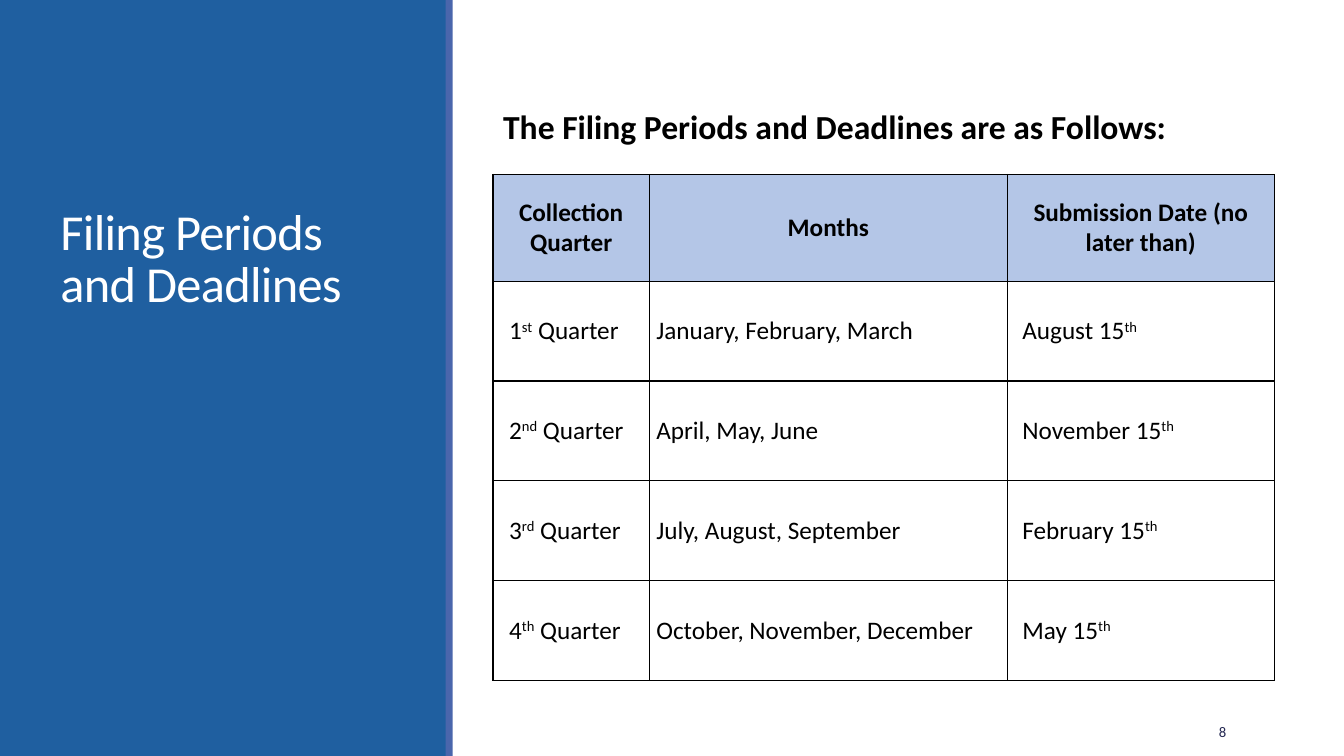
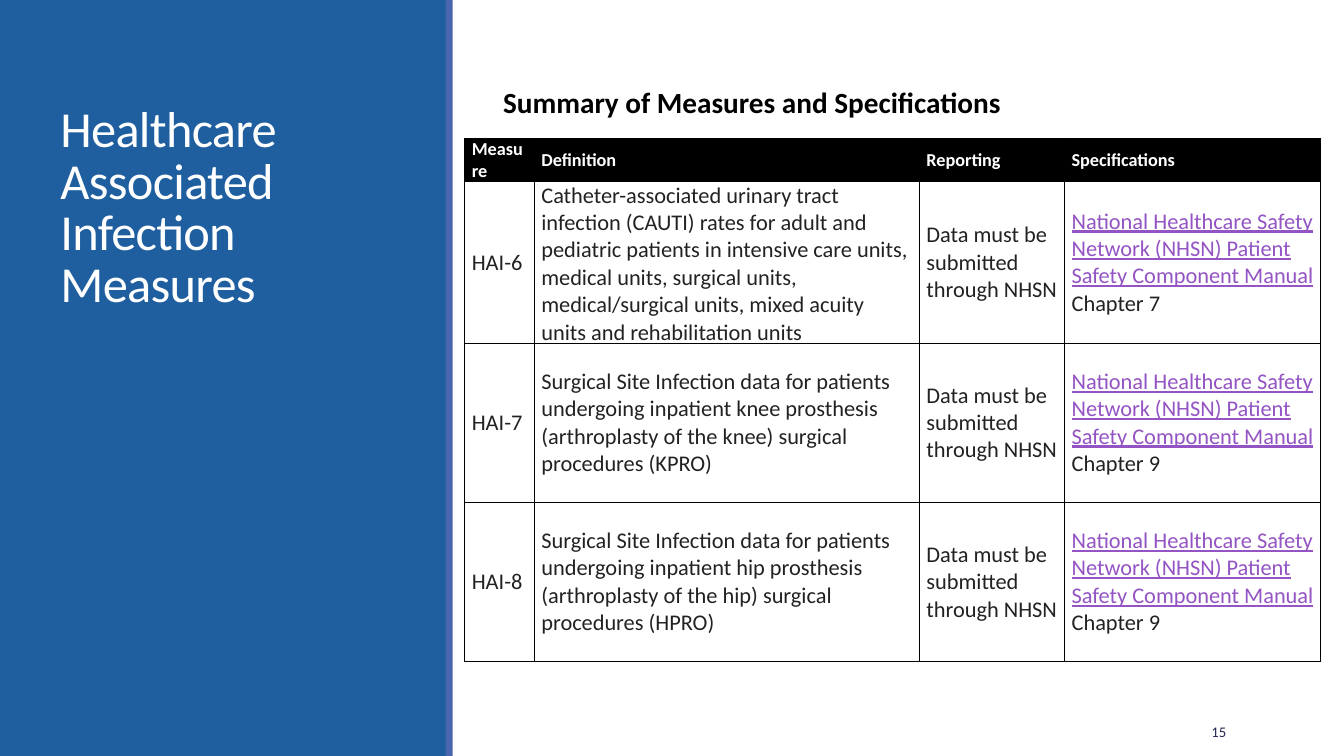
from dataclasses import dataclass

from lxml import etree
from pptx import Presentation
from pptx.dml.color import RGBColor
from pptx.enum import shapes, text
from pptx.oxml import parse_xml
from pptx.oxml.ns import nsdecls
from pptx.util import Inches, Pt


@dataclass(frozen=True)
class Theme:
    font: str = "Calibri"
    panel: str = "1F5FA0"
    stripe: str = "4A66AC"
    white: str = "FFFFFF"
    black: str = "000000"
    body: str = "222222"
    header: str = "B4C6E7"
    link: str = "9454C3"
    number: str = "242852"
    title_size: float = 36
    number_size: float = 10.5


THEME = Theme()
MANUAL = "|National Healthcare Safety Network (NHSN) Patient Safety Component Manual|"
REPORTING = "Data must be submitted through NHSN"

# In a cell, text between bars is marked: raised or shown as a link.
PAGES = [
    dict(
        title="Filing Periods and Deadlines",
        number="8",
        heading="The Filing Periods and Deadlines are as Follows:",
        heading_size=24, heading_top=1.0,
        left=4.89, top=1.73,
        columns=[1.55, 3.55, 2.65], indents=[0.09, 0, 0.08],
        header_height=1.06, row_height=0.99,
        header_size=18, body_size=18,
        header_fill=THEME.header, header_color=THEME.black, body_color=THEME.black,
        header_align=text.PP_ALIGN.CENTER, mark="raised",
        rows=[
            ["Collection Quarter", "Months", "Submission Date (no later than)"],
            ["1|st| Quarter", "January, February, March", "August 15|th|"],
            ["2|nd| Quarter", "April, May, June", "November 15|th|"],
            ["3|rd| Quarter", "July, August, September", "February 15|th|"],
            ["4|th| Quarter", "October, November, December", "May 15|th|"],
        ],
    ),
    dict(
        title="Healthcare Associated Infection Measures",
        number="15",
        heading="Summary of Measures and Specifications",
        heading_size=20.9, heading_top=0.76,
        left=4.61, top=1.37,
        columns=[0.69, 3.82, 1.44, 2.54], indents=[0, 0, 0, 0],
        header_height=0.32, row_height=1.58,
        header_size=13, body_size=16,
        header_fill=THEME.black, header_color=THEME.white, body_color=THEME.body,
        header_align=text.PP_ALIGN.LEFT, mark="link",
        rows=[
            ["Measure", "Definition", "Reporting", "Specifications"],
            ["HAI-6",
             "Catheter-associated urinary tract infection (CAUTI) rates for adult and "
             "pediatric patients in intensive care units, medical units, surgical units, "
             "medical/surgical units, mixed acuity units and rehabilitation units",
             REPORTING, MANUAL + " Chapter 7"],
            ["HAI-7",
             "Surgical Site Infection data for patients undergoing inpatient knee "
             "prosthesis (arthroplasty of the knee) surgical procedures (KPRO)",
             REPORTING, MANUAL + " Chapter 9"],
            ["HAI-8",
             "Surgical Site Infection data for patients undergoing inpatient hip "
             "prosthesis (arthroplasty of the hip) surgical procedures (HPRO)",
             REPORTING, MANUAL + " Chapter 9"],
        ],
    ),
]


def style(paragraph, size, color, bold=False, align=text.PP_ALIGN.LEFT):
    paragraph.alignment = align
    font = paragraph.font
    font.name, font.size, font.bold = THEME.font, Pt(size), bold
    font.color.rgb = RGBColor.from_string(color)


def add_line(slide, words, box, **look):
    """Add a one-paragraph text box, centred vertically in box (inches)."""
    frame = slide.shapes.add_textbox(*map(Inches, box)).text_frame
    frame.word_wrap = True
    frame.vertical_anchor = text.MSO_ANCHOR.MIDDLE
    frame.paragraphs[0].text = words
    style(frame.paragraphs[0], **look)
    return frame


prs = Presentation()
prs.slide_width, prs.slide_height = Inches(13.33), Inches(7.5)
layout = prs.slide_layouts[5]
slides = [prs.slides.add_slide(layout) for _ in PAGES]

# The side panel is drawn once, then moved to the back of the shared layout.
for order, (left, width, color) in enumerate(
        [(0, 4.43, THEME.panel), (4.42, 0.07, THEME.stripe)]):
    band = slides[0].shapes.add_shape(
        shapes.MSO_SHAPE.RECTANGLE, Inches(left), 0, Inches(width), prs.slide_height)
    band.shadow.inherit = False
    band.fill.solid()
    band.fill.fore_color.rgb = RGBColor.from_string(color)
    band.line.fill.background()
    layout.shapes.element.insert(2 + order, band.element)

for slide, page in zip(slides, PAGES):
    title = slide.shapes.title
    title.left, title.top, title.width, title.height = map(Inches, (0.5, 0.65, 3.5, 2.5))
    title.text_frame.text = page["title"]
    title.text_frame.word_wrap = True
    title.text_frame.auto_size = text.MSO_AUTO_SIZE.NONE
    title.text_frame.vertical_anchor = text.MSO_ANCHOR.BOTTOM
    title_line = title.text_frame.paragraphs[0]
    style(title_line, THEME.title_size, THEME.white)
    title_line.line_spacing = 0.85
    title_line.runs[0].font._element.set("spc", "-50")

    add_line(slide, page["number"], (10.83, 7.06, 1.43, 0.4),
             size=THEME.number_size, color=THEME.number, align=text.PP_ALIGN.RIGHT)
    heading = add_line(slide, page["heading"], (4.99, page["heading_top"], 7, 0.5),
                       size=page["heading_size"], color=THEME.black, bold=True)
    heading.margin_left = heading.margin_right = 0

    rows, columns = page["rows"], page["columns"]
    heights = [page["header_height"]] + [page["row_height"]] * (len(rows) - 1)
    table = slide.shapes.add_table(
        len(rows), len(columns), Inches(page["left"]), Inches(page["top"]),
        Inches(sum(columns)), Inches(sum(heights))).table
    for column, width in zip(table.columns, columns):
        column.width = Inches(width)

    for r, (row, height) in enumerate(zip(rows, heights)):
        table.rows[r].height = Inches(height)
        is_header = r == 0
        part = "header" if is_header else "body"
        for c, words in enumerate(row):
            cell = table.cell(r, c)
            cell.vertical_anchor = text.MSO_ANCHOR.MIDDLE
            cell.margin_top = cell.margin_bottom = 0
            cell.margin_right = Inches(0.07)
            cell.margin_left = Inches(0.07 + (0 if is_header else page["indents"][c]))
            for side in "LRTB":
                cell._tc.get_or_add_tcPr().append(parse_xml(
                    f'<a:ln{side} {nsdecls("a")} w="12700"><a:solidFill>'
                    f'<a:srgbClr val="{THEME.black}"/></a:solidFill></a:ln{side}>'))
            cell.fill.solid()
            cell.fill.fore_color.rgb = RGBColor.from_string(
                page["header_fill"] if is_header else THEME.white)

            paragraph = cell.text_frame.paragraphs[0]
            style(paragraph, page[part + "_size"], page[part + "_color"], is_header,
                  page["header_align"] if is_header else text.PP_ALIGN.LEFT)
            for position, piece in enumerate(words.split("|")):
                if not piece:
                    continue
                run = paragraph.add_run()
                run.text = piece
                if position % 2 and page["mark"] == "raised":
                    run.font._element.set("baseline", "30000")
                elif position % 2:
                    run.font.underline = True
                    run.font.color.rgb = RGBColor.from_string(THEME.link)

prs.save("out.pptx")
